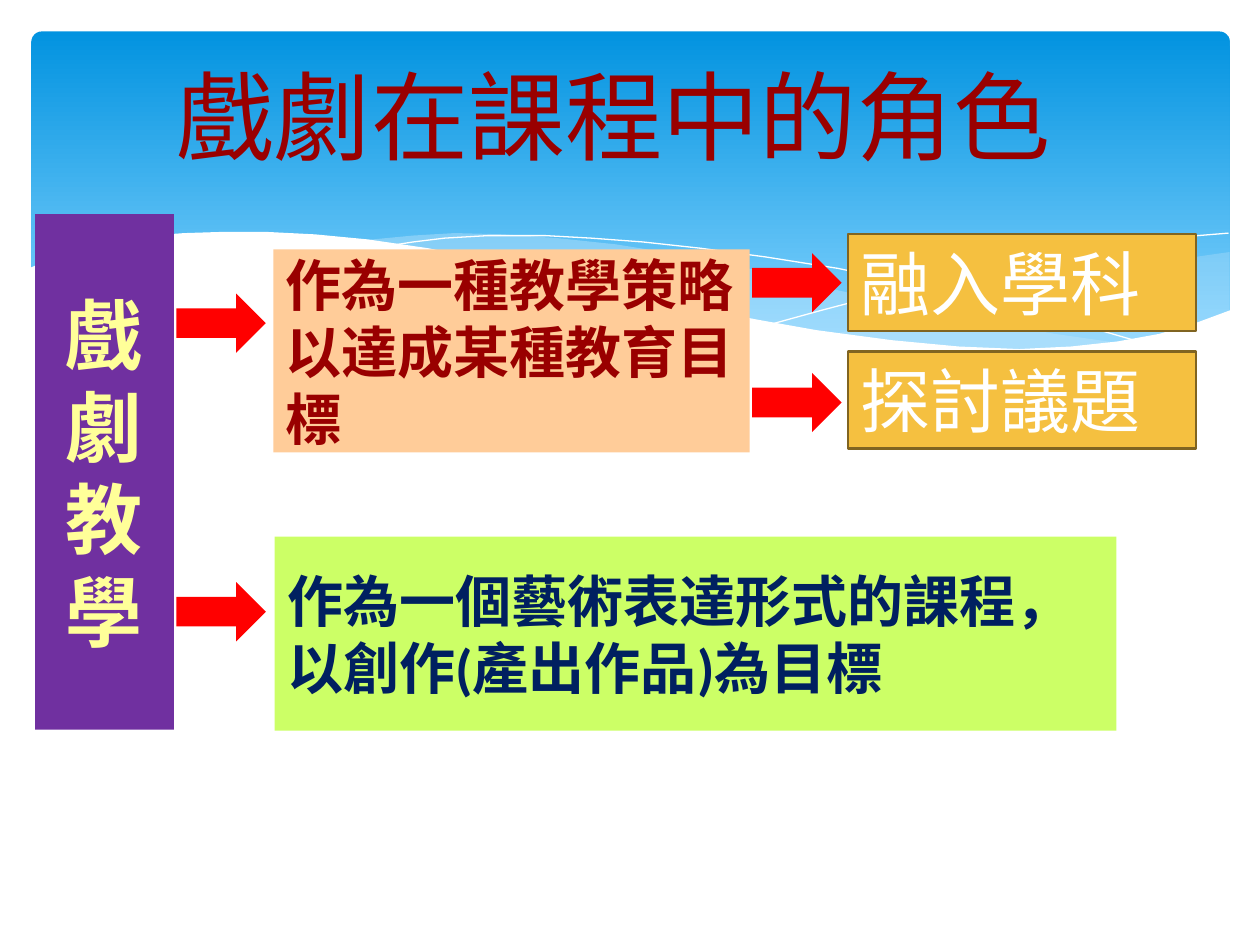
"""Build the slide on the roles of drama in the curriculum."""
from dataclasses import dataclass
from typing import Optional

from pptx import Presentation
from pptx.dml.color import RGBColor
from pptx.enum.shapes import MSO_SHAPE
from pptx.enum.text import MSO_ANCHOR, MSO_AUTO_SIZE, PP_ALIGN
from pptx.oxml.ns import qn
from pptx.util import Inches, Pt
from lxml import etree

RECTANGLE = MSO_SHAPE.RECTANGLE
ROUNDED = MSO_SHAPE.ROUNDED_RECTANGLE
RIGHT_ARROW = MSO_SHAPE.RIGHT_ARROW
TOP, MIDDLE = MSO_ANCHOR.TOP, MSO_ANCHOR.MIDDLE
LEFT, CENTER = PP_ALIGN.LEFT, PP_ALIGN.CENTER
GROW, FIXED = MSO_AUTO_SIZE.SHAPE_TO_FIT_TEXT, MSO_AUTO_SIZE.NONE

WHITE = RGBColor(0xFF, 0xFF, 0xFF)
SKY_DARK = RGBColor(0x02, 0x93, 0xE0)
SKY_LIGHT = RGBColor(0x83, 0xD3, 0xFE)
MIST = RGBColor(0xC6, 0xE7, 0xFC)
PURPLE = RGBColor(0x70, 0x30, 0xA0)
YELLOW = RGBColor(0xFF, 0xFF, 0x99)
PEACH = RGBColor(0xFF, 0xCC, 0x99)
DARK_RED = RGBColor(0x99, 0x00, 0x00)
LIME = RGBColor(0xCC, 0xFF, 0x66)
NAVY = RGBColor(0x00, 0x20, 0x60)
RED = RGBColor(0xFF, 0x00, 0x00)
GOLD = RGBColor(0xF5, 0xC0, 0x40)
BROWN = RGBColor(0x80, 0x64, 0x21)


@dataclass
class Label:
    lines: list
    place: tuple
    color: RGBColor
    size: float
    fill: Optional[RGBColor] = None
    line: Optional[RGBColor] = None
    font: str = "Calibri"
    bold: bool = False
    align: int = LEFT
    anchor: int = MIDDLE
    auto_size: int = FIXED


@dataclass
class Wave:
    points: list
    fill: Optional[RGBColor] = None
    alpha: int = 100


WAVES = [
    Wave([(9.76, 2), (9.48, 2.04), (9.21, 2.1), (8.91, 2.16), (8.61, 2.23),
          (8.05, 2.37), (7.53, 2.48), (7.06, 2.57), (6.61, 2.65), (6.91, 2.69),
          (7.32, 2.74), (7.69, 2.77), (8.03, 2.78), (8.44, 2.77), (8.81, 2.73),
          (9.13, 2.67), (9.42, 2.59), (9.76, 2.47)], MIST, 29),
    Wave([(8.93, 2.73), (8.37, 2.65), (7.75, 2.54), (7.06, 2.4), (6.29, 2.22),
          (5.98, 2.14), (5.69, 2.08), (5.41, 2.03), (5.14, 1.98), (4.89, 1.94),
          (4.42, 1.89), (3.99, 1.86), (3.61, 1.85), (3.28, 1.87), (2.86, 1.91),
          (3.23, 1.96), (3.62, 2.03), (4.04, 2.11), (4.49, 2.22), (5.3, 2.4),
          (5.84, 2.52), (6.34, 2.61), (6.8, 2.68), (7.22, 2.74), (7.61, 2.77),
          (7.96, 2.78), (8.38, 2.78), (8.67, 2.76)], MIST, 40),
    Wave([(3.09, 1.95), (3.28, 1.92), (3.53, 1.89), (3.87, 1.87), (4.33, 1.87),
          (4.69, 1.89), (5.1, 1.92), (5.56, 1.97), (6.08, 2.04), (6.65, 2.13),
          (7.27, 2.26), (7.95, 2.41), (8.69, 2.61), (9.07, 2.72)]),
    Wave([(6.13, 2.57), (6.53, 2.46), (6.95, 2.35), (7.48, 2.23), (8.06, 2.1),
          (8.66, 1.99), (8.95, 1.94), (9.24, 1.9), (9.51, 1.87), (9.75, 1.85)]),
    Wave([(9.77, 2.46), (9.5, 2.56), (9.2, 2.65), (8.87, 2.71), (8.5, 2.75),
          (8.09, 2.77), (7.61, 2.75), (7.08, 2.7), (6.48, 2.62), (6.03, 2.54),
          (5.55, 2.45), (5.03, 2.33), (4.47, 2.2), (3.91, 2.07), (3.4, 1.97),
          (2.92, 1.9), (2.5, 1.86), (2.11, 1.84), (1.77, 1.84), (1.46, 1.85),
          (1.19, 1.87), (0.95, 1.91), (0.67, 1.97), (0.46, 2.03), (0.23, 2.13),
          (0.23, 3.29), (9.77, 3.29)], WHITE),
]

LABELS = [
    Label(list("戲劇教學"), (0.28, 1.7, 1.1, 4.09), YELLOW, 44, PURPLE,
          font="Arial", bold=True, align=CENTER),
    Label(["作為一種教學策略", "以達成某種教育目標"], (2.17, 1.98, 3.78, 1.61),
          DARK_RED, 32, PEACH, bold=True),
    Label(["作為一個藝術表達形式的課程，", "以創作(產出作品)為目標"],
          (2.18, 4.26, 6.68, 1.54), NAVY, 32, LIME, bold=True),
    *[Label([text], (6.73, top, 2.76, 0.77), WHITE, 40, GOLD, BROWN,
            anchor=TOP, auto_size=GROW)
      for text, top in (("融入學科", 1.86), ("探討議題", 2.79))],
    Label(["戲劇在課程中的角色"], (0.58, 0.44, 8.59, 0.94), DARK_RED, 55.5,
          align=CENTER),
]

ARROWS = [(1.4, 2.33), (1.4, 4.62), (5.97, 2.01), (5.97, 2.96)]


def paint(shape, fill: Optional[RGBColor], line: Optional[RGBColor], width: float) -> None:
    shape.shadow.inherit = False
    for part, color in ((shape.fill, fill), (shape.line.fill, line)):
        if color is None:
            part.background()
        else:
            part.solid()
            part.fore_color.rgb = color
    if line is not None:
        shape.line.width = Pt(width)


def draw_sky(page) -> None:
    sky = page.shapes.add_shape(ROUNDED, *map(Inches, (0.25, 0.25, 9.51, 2.7)))
    paint(sky, None, None, 0)
    sky.adjustments[0] = 0.03
    sky.fill.gradient()
    sky.fill.gradient_angle = 270
    stops = ((0, SKY_DARK), (0.9, SKY_LIGHT))
    for stop, (position, color) in zip(sky.fill.gradient_stops, stops):
        stop.position = position
        stop.color.rgb = color


def draw_wave(page, wave: Wave) -> None:
    points = [(Inches(x), Inches(y)) for x, y in wave.points]
    builder = page.shapes.build_freeform(*points[0])
    builder.add_line_segments(points[1:], close=wave.fill is not None)
    shape = builder.convert_to_shape()
    paint(shape, wave.fill, WHITE if wave.fill is None else None, 0)
    if wave.alpha < 100:
        color = shape._element.spPr.find(qn("a:solidFill")).find(qn("a:srgbClr"))
        etree.SubElement(color, qn("a:alpha"), val=str(wave.alpha * 1000))


def draw_label(page, label: Label) -> None:
    place = map(Inches, label.place)
    if label.fill is None:
        box = page.shapes.add_textbox(*place)
    else:
        box = page.shapes.add_shape(RECTANGLE, *place)
        paint(box, label.fill, label.line, 1.25)
    frame = box.text_frame
    layout = {"word_wrap": True, "auto_size": label.auto_size,
              "vertical_anchor": label.anchor}
    for name, value in layout.items():
        setattr(frame, name, value)
    style = {"name": label.font, "size": Pt(label.size), "bold": label.bold}
    for index, text in enumerate(label.lines):
        para = frame.add_paragraph() if index else frame.paragraphs[0]
        para.alignment = label.align
        span = para.add_run()
        span.text = text
        for name, value in style.items():
            setattr(span.font, name, value)
        span.font.color.rgb = label.color


def draw_arrow(page, left: float, top: float) -> None:
    arrow = page.shapes.add_shape(RIGHT_ARROW, *map(Inches, (left, top, 0.71, 0.47)))
    paint(arrow, RED, None, 0)


def main() -> None:
    deck = Presentation()
    deck.slide_width, deck.slide_height = Inches(10), Inches(7.5)
    page = deck.slides.add_slide(deck.slide_layouts[6])
    draw_sky(page)
    for wave in WAVES:
        draw_wave(page, wave)
    for label in LABELS:
        draw_label(page, label)
    for left, top in ARROWS:
        draw_arrow(page, left, top)
    deck.save("out.pptx")


if __name__ == "__main__":
    main()
